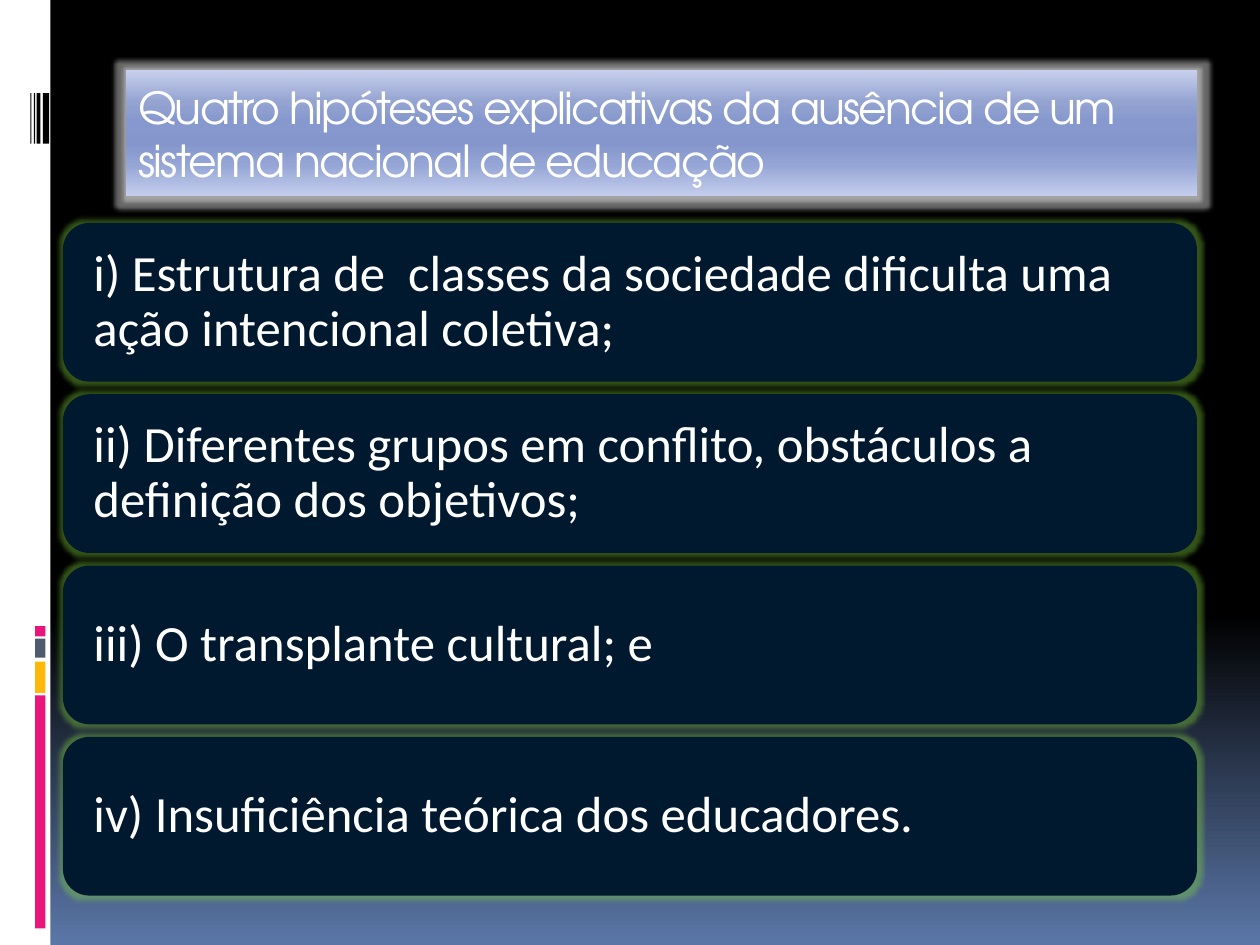
from lxml import etree
from pptx import Presentation
from pptx.dml.color import RGBColor
from pptx.enum.shapes import MSO_SHAPE
from pptx.enum.text import MSO_ANCHOR, PP_ALIGN
from pptx.oxml.ns import qn
from pptx.util import Pt

RECTANGLE = MSO_SHAPE.RECTANGLE
ROUNDED = MSO_SHAPE.ROUNDED_RECTANGLE
MIDDLE = MSO_ANCHOR.MIDDLE
LEFT = PP_ALIGN.LEFT

WHITE, BLACK, NAVY = "FFFFFF", "000000", "00192F"
PINK, AMBER, SLATE, GREEN = "EA157A", "FEB80A", "4E5B6F", "7FD13B"

BACKGROUND = [(0, BLACK), (65, BLACK), (100, "5B77A8")]
TITLE_FILL = [(0, "C7CFEC"), (25, "94A3D1"), (40, "8698CD"), (50, "8496CC"),
              (60, "8698CD"), (75, "95A5D5"), (100, "C5CEED")]
TITLE = "Quatro hipóteses explicativas da ausência de um sistema nacional de educação"
HYPOTHESES = [
    "i) Estrutura de  classes da sociedade dificulta uma ação intencional coletiva;",
    "ii) Diferentes grupos em conflito, obstáculos a definição dos objetivos;",
    "iii) O transplante cultural; e",
    "iv) Insuficiência teórica dos educadores.",
]
SIDE_BLOCKS = [(397.4, 133.2, PINK), (378, 18, AMBER), (365, 10.8, SLATE), (357.8, 5.8, PINK)]
BARCODE = [(24.5, 3.6), (20.9, 2.2), (19.4, 0.7), (17.3, 0.7)]


def color(value):
    """Turn a hex string into a colour."""
    return RGBColor.from_string(value)


def apply(target, values):
    """Set attributes from a dict of format values."""
    for name, value in values.items():
        setattr(target, name, value)


class SlideBuilder:
    """Holds the style and the current slide."""

    title_font = {"name": "TeX Gyre Adventor", "size": Pt(25.2)}
    body_font = {"name": "Calibri", "size": Pt(29)}
    glow_radius = Pt(5)
    glow_alpha = 40

    def __init__(self, slide):
        """Start building on a slide."""
        self.slide = slide

    def gradient(self, fill, element, stops):
        """Give a fill a vertical gradient with any number of stops."""
        fill.gradient()
        fill.gradient_angle = 270
        stop_list = element.find(".//" + qn("a:gsLst"))
        for stop in list(stop_list):
            stop_list.remove(stop)
        for position, value in stops:
            stop = etree.SubElement(stop_list, qn("a:gs"), pos=str(position * 1000))
            etree.SubElement(stop, qn("a:srgbClr"), val=value)

    def background(self, stops):
        """Paint the slide background."""
        self.gradient(self.slide.background.fill, self.slide.element, stops)

    def block(self, left, top, width, height, fill, kind=RECTANGLE):
        """Add a plain shape with a solid or gradient fill."""
        box = self.slide.shapes.add_shape(kind, Pt(left), Pt(top), Pt(width), Pt(height))
        box.shadow.inherit = False
        box.line.fill.background()
        if isinstance(fill, str):
            box.fill.solid()
            box.fill.fore_color.rgb = color(fill)
        else:
            self.gradient(box.fill, box.element, fill)
        return box

    def glow(self, box, value):
        """Add a translucent glow around a shape."""
        effects = box.element.find(".//" + qn("a:effectLst"))
        glow = etree.SubElement(effects, qn("a:glow"), rad=str(self.glow_radius))
        tint = etree.SubElement(glow, qn("a:srgbClr"), val=value)
        etree.SubElement(tint, qn("a:alpha"), val=str(self.glow_alpha * 1000))

    def label(self, box, text, font, frame_format, para_format):
        """Put one white, left-aligned paragraph into a shape."""
        frame = box.text_frame
        apply(frame, {"word_wrap": True, "vertical_anchor": MIDDLE, **frame_format})
        para = frame.paragraphs[0]
        apply(para, {"alignment": LEFT, **para_format})
        span = para.add_run()
        span.text = text
        apply(span.font, font)
        span.font.color.rgb = color(WHITE)

    def title(self, text):
        """Add the glowing title bar."""
        box = self.block(72, 40.3, 612, 72, TITLE_FILL)
        self.glow(box, WHITE)
        self.label(box, text, self.title_font, {}, {})
        box.element.find(".//" + qn("a:rPr")).set("spc", "-100")

    def card(self, top, text):
        """Add one rounded hypothesis card."""
        box = self.block(36, top, 648, 90.7, NAVY, ROUNDED)
        self.glow(box, GREEN)
        inset = Pt(13)
        self.label(box, text, self.body_font,
                   {"margin_left": inset, "margin_right": inset},
                   {"line_spacing": 0.9})


def main():
    """Build and save the deck."""
    deck = Presentation()
    apply(deck, {"slide_width": Pt(720), "slide_height": Pt(540)})
    builder = SlideBuilder(deck.slides.add_slide(deck.slide_layouts[6]))
    builder.background(BACKGROUND)
    builder.block(0, 0, 28.8, 540, WHITE)
    for top, height, fill in SIDE_BLOCKS:
        builder.block(20.1, top, 5.8, height, fill)
    for left, width in BARCODE:
        builder.block(left, 53.3, width, 28.8, BLACK)
    builder.title(TITLE)
    for index, text in enumerate(HYPOTHESES):
        builder.card(127.4 + 97.9 * index, text)
    deck.save("out.pptx")


if __name__ == "__main__":
    main()
